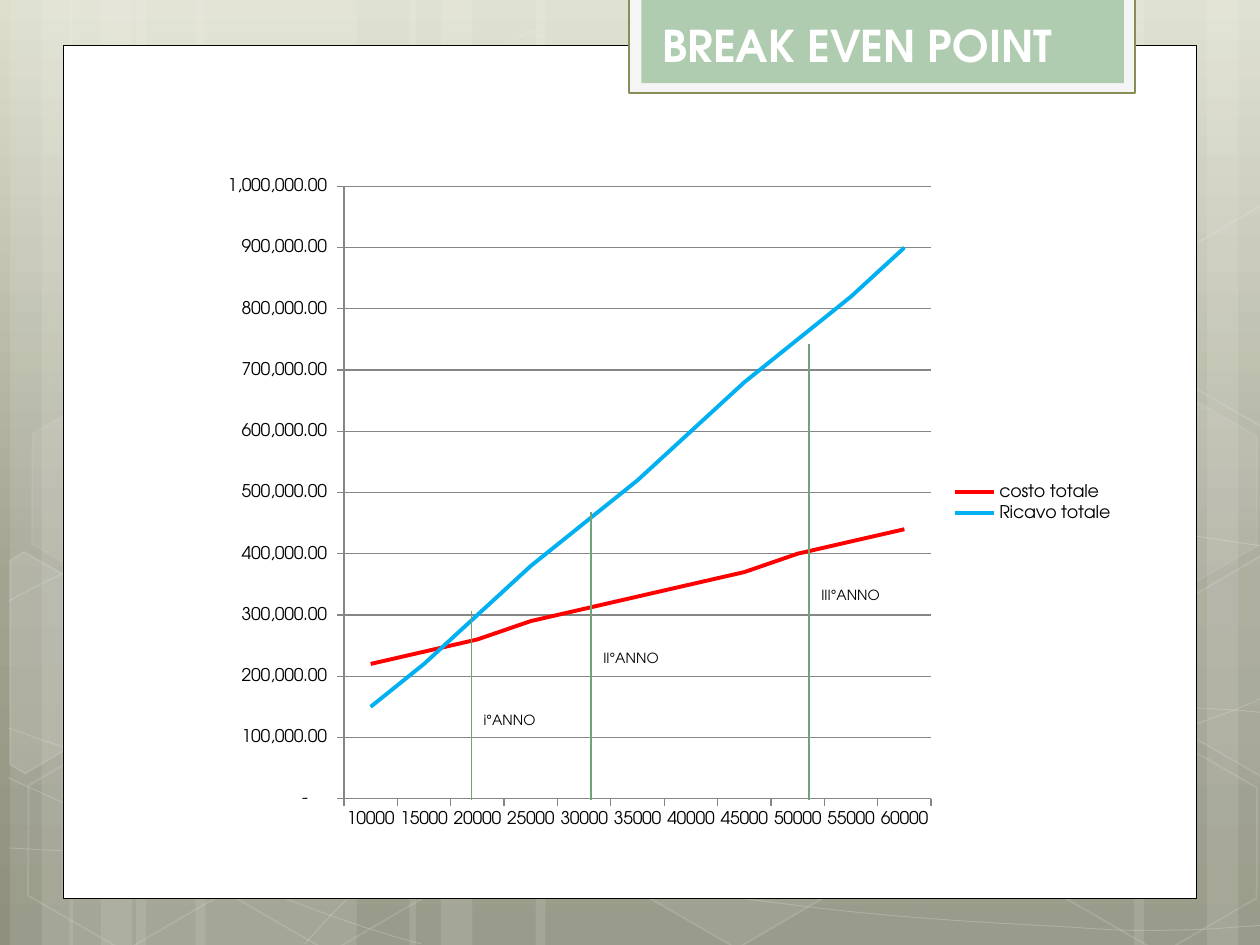
import copy

import pptx
import pptx.chart.data
import pptx.dml.color
import pptx.enum.chart
import pptx.enum.shapes
import pptx.oxml.ns
import pptx.util
from pptx.util import Inches

qn = pptx.oxml.ns.qn
FONT = "TeX Gyre Adventor"
COLORS = {
    "white": "FFFFFF", "black": "000000", "sky": "DDDFCC", "mid": "A2A391",
    "ground": "8F917E", "frame": "F5F5F5", "olive": "8A8E56", "sage": "B0CCB0",
    "marker": "72A376", "grid": "868686", "cost": "FF0000", "revenue": "00B0F0",
}

# left, width of the pale vertical stripes
STRIPES = [(1.08, 1.75), (0.08, 0.5), (0.33, 0.83), (1.55, 1.75), (0.55, 0.5),
           (0.8, 0.83), (7.33, 1.75), (9.58, 0.5), (9, 0.83), (4.25, 3.08),
           (3.25, 0.5), (3.5, 0.83)]

# start point, then two control points and an end point for each segment
CURVES = [
    [(0.07, 6.73), (0.61, 6.76), (1.15, 6.79), (1.9, 6.78), (2.65, 6.77),
     (3.58, 6.75), (4.58, 6.65), (5.58, 6.55), (7, 6.36), (7.92, 6.17),
     (8.83, 5.98), (9.77, 5.68), (10.07, 5.51)],
    [(0.07, 4.77), (0.36, 4.61), (0.65, 4.46), (1.21, 4.31), (1.78, 4.16),
     (2.59, 3.94), (3.47, 3.87), (4.36, 3.8), (5.44, 3.79), (6.54, 3.87),
     (7.64, 3.95), (9.47, 4.26), (10.07, 4.34)],
    [(0.06, 6.17), (1.27, 6.72), (2.47, 7.27), (3.34, 7.49)],
    [(0.07, 5.78), (0.38, 5.89), (0.7, 6), (1.28, 6.16), (1.86, 6.31),
     (2.73, 6.56), (3.57, 6.73), (4.4, 6.9), (5.45, 7.08), (6.28, 7.18),
     (7.11, 7.29), (8, 7.33), (8.53, 7.36), (9.05, 7.4), (9.19, 7.38),
     (9.45, 7.38), (9.71, 7.37), (9.89, 7.35), (10.07, 7.34)],
    [(2.42, 7.49), (2.6, 7.29), (2.78, 7.09), (3.02, 6.91), (3.26, 6.73),
     (3.6, 6.53), (3.88, 6.39), (4.16, 6.25), (4.33, 6.19), (4.7, 6.09),
     (5.06, 5.99), (5.73, 5.85), (6.08, 5.78), (6.44, 5.71), (6.49, 5.71),
     (6.8, 5.69), (7.11, 5.66), (7.6, 5.63), (7.94, 5.62), (8.29, 5.61),
     (8.86, 5.62), (8.86, 5.62), (9.08, 5.62), (9.31, 5.62), (9.53, 5.62),
     (9.71, 5.63), (9.88, 5.64), (9.97, 5.65), (10.06, 5.66), (10.03, 5.65),
     (10.06, 5.66)],
]

# left, top, fill opacity (None for no fill), line opacity
HEXAGONS = [(3.34, 0.36, 4, 8), (4.97, 5.89, 6, 12), (0.11, 5.91, None, 12),
            (0.14, 3.12, 7, 8), (1.74, 5.92, None, 12), (8.34, 5.93, None, 12),
            (8.34, 3.14, 7, 8)]

# hexagons cut by the slide edge: corners, fill opacity
CUT_HEXAGONS = [
    ([(0.08, 4.45), (0.19, 4.38), (0.96, 4.82), (0.95, 5.7), (0.2, 6.14), (0.08, 6.07)], 10),
    ([(9.26, 4.85), (10.01, 4.41), (10.09, 4.46), (10.09, 6.13), (10.02, 6.17), (9.26, 5.73)], 4),
    ([(9.26, 2.07), (10.01, 1.63), (10.1, 1.68), (10.09, 3.35), (10.02, 3.39), (9.26, 2.95)], None),
]

# x, top of the marker, label, label top, label width
YEARS = [(3.74, 4.85, "i°ANNO", 5.6, 0.71), (4.69, 4.06, "II°ANNO", 5.11, 1.5),
         (6.42, 2.73, "III°ANNO", 4.61, 1.18)]


def rgb(name):
    return pptx.dml.color.RGBColor.from_string(COLORS[name])


class Deck:
    def __init__(self):
        self.prs = pptx.Presentation()
        self.prs.slide_width, self.prs.slide_height = Inches(10), Inches(7.5)
        self.s = self.prs.slides.add_slide(self.prs.slide_layouts[6])

    def background(self, stops):
        fill = self.s.background.fill
        fill.gradient()
        fill.gradient_angle = 270
        gs_list = self.s._element.find(".//" + qn("a:gsLst"))
        gs_list.append(copy.deepcopy(gs_list[-1]))
        for stop, (position, color) in zip(fill.gradient_stops, stops):
            stop.position, stop.color.rgb = position, rgb(color)

    def paint(self, fill, color, alpha=100):
        """Give a fill a solid colour with an opacity in percent, or none."""
        if color is None or alpha is None:
            fill.background()
            return
        fill.solid()
        fill.fore_color.rgb = rgb(color)
        if alpha < 100:
            node = fill._xPr.find(".//" + qn("a:srgbClr"))
            node.append(node.makeelement(qn("a:alpha"), {"val": str(alpha * 1000)}))

    def style(self, sp, fill=None, alpha=100, line=None, width=1, line_alpha=100):
        sp.shadow.inherit = False
        self.paint(sp.fill, fill, alpha)
        self.paint(sp.line.fill, line, line_alpha)
        if line:
            sp.line.width = pptx.util.Pt(width)
        return sp

    def shape(self, kind, box, **look):
        kind = getattr(pptx.enum.shapes.MSO_SHAPE, kind)
        return self.style(self.s.shapes.add_shape(kind, *map(Inches, box)), **look)

    def outline(self, points, close=True, **look):
        pts = [(Inches(x), Inches(y)) for x, y in points]
        builder = self.s.shapes.build_freeform(*pts[0])
        builder.add_line_segments(pts[1:], close=close)
        return self.style(builder.convert_to_shape(), **look)

    def curve(self, points, **look):
        """Draw a chain of cubic segments by regrouping a polyline's points."""
        sp = self.outline(points, close=False, **look)
        lines = sp._element.findall(".//" + qn("a:lnTo"))
        for i in range(0, len(lines), 3):
            cubic = lines[i].makeelement(qn("a:cubicBezTo"), {})
            lines[i].addprevious(cubic)
            for line in lines[i:i + 3]:
                cubic.append(line[0])
                line.getparent().remove(line)

    def text(self, box, words, **font):
        tf = self.s.shapes.add_textbox(*map(Inches, box)).text_frame
        tf.word_wrap = True
        r = tf.paragraphs[0].add_run()
        r.text = words
        self.font(r.font, **font)

    def font(self, font, size, color="black", **extra):
        font.color.rgb = rgb(color)
        for key, value in {"name": FONT, "size": pptx.util.Pt(size), **extra}.items():
            setattr(font, key, value)

    def line(self, start, end, color, width):
        straight = pptx.enum.shapes.MSO_CONNECTOR.STRAIGHT
        c = self.s.shapes.add_connector(straight, *map(Inches, start + end))
        c.line.color.rgb, c.line.width = rgb(color), pptx.util.Pt(width)
        sp_pr = c._element.spPr
        sp_pr.append(sp_pr.makeelement(qn("a:effectLst"), {}))

    def line_chart(self, box, cats, series, plot_box):
        enum = pptx.enum.chart
        data = pptx.chart.data.CategoryChartData()
        data.categories = cats
        for name, values, _ in series:
            data.add_series(name, values)
        chart = self.s.shapes.add_chart(
            enum.XL_CHART_TYPE.LINE, *map(Inches, box), data).chart
        self.font(chart.font, 10)
        chart.has_title = False
        chart.has_legend = True
        chart.legend.position = enum.XL_LEGEND_POSITION.RIGHT
        chart.legend.include_in_layout = False
        plot = chart.plots[0]
        plot.vary_by_categories = False
        for ser, (_, _, color) in zip(plot.series, series):
            ser.smooth = False
            ser.format.line.color.rgb = rgb(color)
            ser.format.line.width = pptx.util.Pt(2.25)
        val = chart.value_axis
        for key, value in {"minimum_scale": 0, "maximum_scale": 1000000,
                           "major_unit": 100000, "has_major_gridlines": True}.items():
            setattr(val, key, value)
        val.tick_labels.number_format = '_(* #,##0.00_);_(* \\(#,##0.00\\);_(* "-"??_);_(@_)'
        val.tick_labels.number_format_is_linked = False
        for axis in (val, chart.category_axis):
            axis.major_tick_mark = enum.XL_TICK_MARK.OUTSIDE
        for part in (val, chart.category_axis, val.major_gridlines):
            part.format.line.color.rgb = rgb("grid")
            part.format.line.width = pptx.util.Pt(0.75)
        self.place_plot(chart, box, plot_box)

    def place_plot(self, chart, box, plot_box):
        """Fix the inner plot area, given in slide inches."""
        left, top, width, height = box
        x, y, w, h = plot_box
        parts = {"layoutTarget": "inner", "xMode": "edge", "yMode": "edge",
                 "x": (x - left) / width, "y": (y - top) / height,
                 "w": w / width, "h": h / height}
        area = chart._chartSpace.find(".//" + qn("c:plotArea"))
        for old in area.findall(qn("c:layout")):
            area.remove(old)
        layout = area.makeelement(qn("c:layout"), {})
        area.insert(0, layout)
        manual = layout.makeelement(qn("c:manualLayout"), {})
        layout.append(manual)
        for tag, value in parts.items():
            manual.append(manual.makeelement(qn("c:" + tag), {"val": str(value)}))


def main():
    deck = Deck()
    deck.background([(0, "sky"), (0.62, "mid"), (1, "ground")])
    for left, width in STRIPES:
        deck.shape("RECTANGLE", (left, 0, width, 7.5), fill="white", alpha=10)
    for points in CURVES:
        deck.curve(points, line="white", width=0.5, line_alpha=20)
    for left, top, alpha, line_alpha in HEXAGONS:
        sp = deck.shape("HEXAGON", (left, top, 1.75, 1.52), fill="white", alpha=alpha,
                        line="white", line_alpha=line_alpha)
        sp.rotation = 30
        sp.adjustments[0] = 0.285
    for points, alpha in CUT_HEXAGONS:
        deck.outline(points, fill="white", alpha=alpha, line="white", line_alpha=12)

    deck.shape("RECTANGLE", (0.5, 0.36, 9, 6.77), fill="white", line="black", width=0.5)
    deck.shape("RECTANGLE", (4.99, -0.02, 4.02, 0.76), fill="frame", line="olive", width=1.25)
    deck.shape("RECTANGLE", (5.09, -0.02, 3.83, 0.68), fill="sage")
    deck.text((5.16, 0.1, 3.78, 0.52), "BREAK EVEN POINT", size=25, color="white", bold=True)

    units = range(10000, 60001, 5000)
    costs = [round(176000 + 4.4 * n, -4) for n in units]
    revenues = [round(15 * n, -4) for n in units]
    deck.line_chart(
        (1.61, 1.31, 7.33, 5.36), [str(n) for n in units],
        [("costo totale ", costs, "cost"), ("Ricavo totale", revenues, "revenue")],
        (2.73, 1.48, 4.66, 4.86))
    for x, top, _, _, _ in YEARS:
        deck.line((x, 6.35), (x, top), "marker", 0.75)
    for x, _, label, top, width in YEARS:
        deck.text((x, top, width, 0.24), label, size=8)
    deck.prs.save("out.pptx")


if __name__ == "__main__":
    main()
